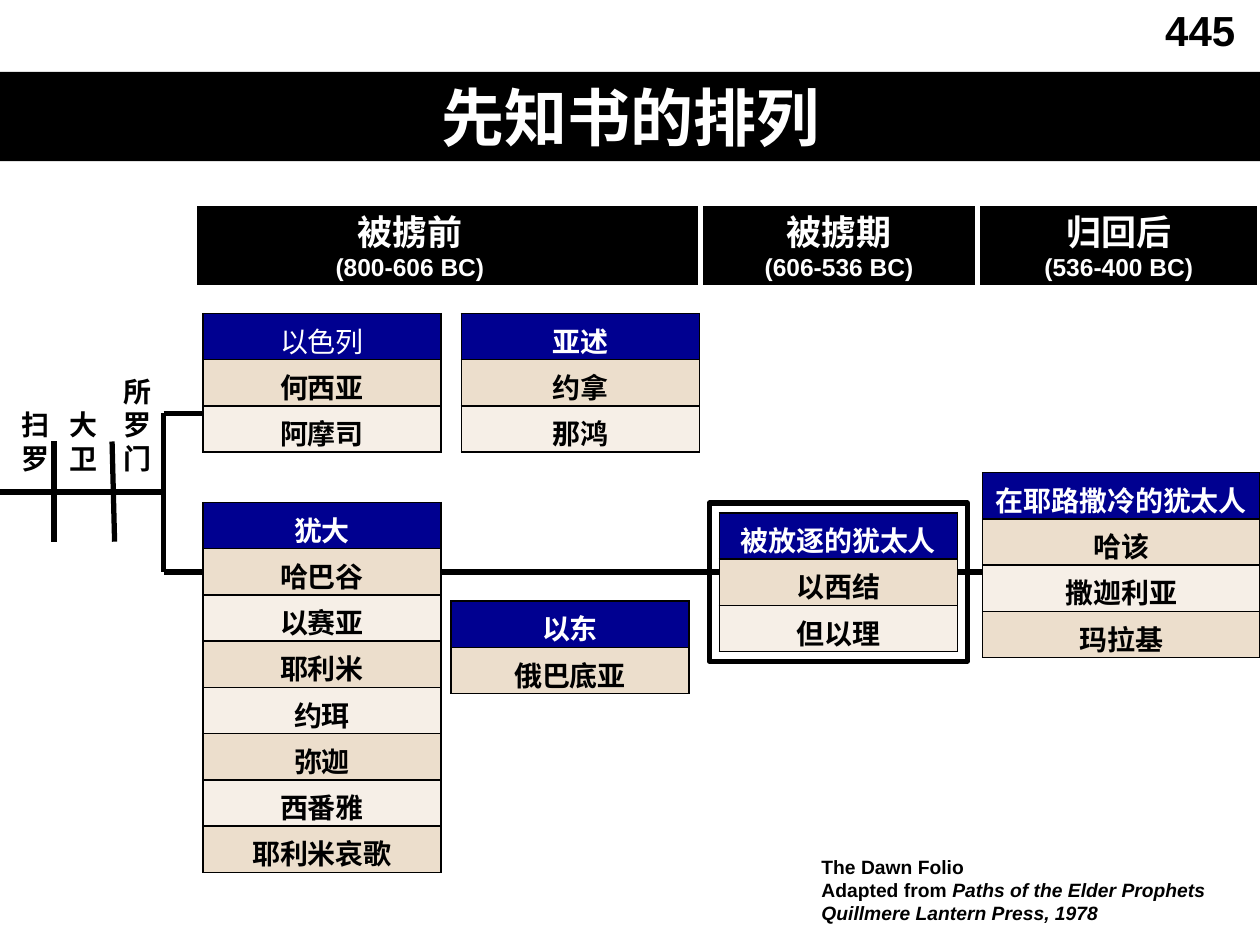
import dataclasses

import pptx
import pptx.dml.color
import pptx.enum.lang
import pptx.enum.shapes
import pptx.enum.text
import pptx.oxml
import pptx.oxml.ns
import pptx.util

Cm = pptx.util.Cm
RGBColor = pptx.dml.color.RGBColor
ALIGN = pptx.enum.text.PP_ALIGN
ANCHOR = pptx.enum.text.MSO_ANCHOR
CHINESE = pptx.enum.lang.MSO_LANGUAGE_ID.SIMPLIFIED_CHINESE

BLACK = RGBColor(0x00, 0x00, 0x00)
WHITE = RGBColor(0xFF, 0xFF, 0xFF)
NAVY = RGBColor(0x00, 0x00, 0x90)
SAND = RGBColor(0xEC, 0xDE, 0xCC)
CREAM = RGBColor(0xF6, 0xEF, 0xE7)

ROW_HEIGHT = 0.93
LIST_WIDTH = 4.8
FRAME_GAP = 0.2


@dataclasses.dataclass
class Box:
    left: float
    top: float
    width: float
    height: float

    def lengths(self):
        return Cm(self.left), Cm(self.top), Cm(self.width), Cm(self.height)


def add_text(para, text, size=16, color=BLACK, bold=True, italic=False, align=ALIGN.CENTER):
    para.alignment = align
    for number, line in enumerate(text.split("\n")):
        if number:
            para.add_line_break()
        span = para.add_run()
        span.text = line
        span.font.name = "Arial"
        span.font.size = pptx.util.Pt(size)
        span.font.color.rgb = color
        span.font.bold = bold
        span.font.italic = italic
        span.font.language_id = CHINESE


def add_text_box(page, box, wrap=False):
    frame = page.shapes.add_textbox(*box.lengths()).text_frame
    frame.word_wrap = wrap
    return frame


def add_rectangle(page, box, fill, line_color):
    shape = page.shapes.add_shape(pptx.enum.shapes.MSO_SHAPE.RECTANGLE, *box.lengths())
    shape.shadow.inherit = False
    if fill is None:
        shape.fill.background()
    else:
        shape.fill.solid()
        shape.fill.fore_color.rgb = fill
    shape.line.color.rgb = line_color
    shape.line.width = pptx.util.Pt(3)
    return shape


def add_line(page, start_x, start_y, end_x, end_y):
    line = page.shapes.add_connector(
        pptx.enum.shapes.MSO_CONNECTOR.STRAIGHT, Cm(start_x), Cm(start_y), Cm(end_x), Cm(end_y)
    )
    line.line.color.rgb = BLACK
    line.line.width = pptx.util.Pt(3)
    properties = line._element.spPr
    properties.append(pptx.oxml.parse_xml(f'<a:effectLst {pptx.oxml.ns.nsdecls("a")}/>'))


def add_title(page, box):
    title = page.shapes.title
    title.left, title.top, title.width, title.height = box.lengths()
    title.fill.solid()
    title.fill.fore_color.rgb = BLACK
    frame = title.text_frame
    frame.auto_size = pptx.enum.text.MSO_AUTO_SIZE.NONE
    frame.vertical_anchor = ANCHOR.MIDDLE
    add_text(frame.paragraphs[0], "先知书的排列", size=36, color=WHITE)


def add_page_number(page, box):
    frame = add_text_box(page, box)
    add_text(frame.paragraphs[0], "445", size=24, align=ALIGN.LEFT)


def add_periods(page, box):
    periods = [
        ("被掳前", "(800-606 BC)", 10.21, 1.5),
        ("被掳期", "(606-536 BC)", 5.59, 0),
        ("归回后", "(536-400 BC)", 5.69, 0),
    ]
    left = box.left
    for name, years, width, right_indent in periods:
        shape = add_rectangle(page, Box(left, box.top, width, box.height), BLACK, WHITE)
        frame = shape.text_frame
        frame.vertical_anchor = ANCHOR.TOP
        heading = frame.paragraphs[0]
        add_text(heading, name, size=20, color=WHITE)
        heading._p.get_or_add_pPr().set("marR", str(Cm(right_indent)))
        add_text(frame.add_paragraph(), years, size=14, color=WHITE)
        left += width


def add_kings(page, box):
    middle = box.top + 2.5
    fork = box.left + 3.3
    right = box.left + box.width
    upper = box.top + 0.91
    lower = box.top + box.height
    add_line(page, box.left, middle, fork, middle)
    for foot, head in [(1.09, 1.09), (2.31, 2.26)]:
        add_line(page, box.left + foot, middle + 1, box.left + head, middle - 1.02)
    for branch in (upper, lower):
        add_line(page, fork, branch, right, branch)
    add_line(page, fork, lower, fork, upper)
    for name, left, top, width in [
        ("扫\n罗", 0.18, 0.68, 1.09),
        ("大\n卫", 1.04, 0.68, 1.3),
        ("所\n罗\n门", 2.13, 0, 1.3),
    ]:
        label = Box(box.left + left, box.top + top, width, 2.31 - top)
        add_text(add_text_box(page, label).paragraphs[0], name)


def add_borders(cell):
    properties = cell._tc.get_or_add_tcPr()
    for side in ("lnL", "lnR", "lnT", "lnB"):
        properties.append(pptx.oxml.parse_xml(
            f'<a:{side} {pptx.oxml.ns.nsdecls("a")} w="12700"><a:solidFill>'
            f'<a:srgbClr val="{BLACK}"/></a:solidFill></a:{side}>'
        ))


def add_prophets(page, box, names, bold_heading=True):
    table = page.shapes.add_table(len(names), 1, *box.lengths()).table
    for number, name in enumerate(names):
        table.rows[number].height = Cm(ROW_HEIGHT)
        cell = table.cell(number, 0)
        add_borders(cell)
        heading = number == 0
        cell.fill.solid()
        cell.fill.fore_color.rgb = NAVY if heading else (CREAM, SAND)[number % 2]
        add_text(
            cell.text_frame.paragraphs[0], name,
            color=WHITE if heading else BLACK, bold=bold_heading or not heading,
        )


def add_credit(page, box):
    frame = add_text_box(page, box, wrap=True)
    lines = [
        [("The Dawn Folio", False)],
        [("Adapted from ", False), ("Paths of the Elder Prophets", True)],
        [("Quillmere Lantern Press, 1978", True)],
    ]
    for number, spans in enumerate(lines):
        para = frame.add_paragraph() if number else frame.paragraphs[0]
        for text, italic in spans:
            add_text(para, text, size=11, italic=italic, align=ALIGN.LEFT)


def main():
    deck = pptx.Presentation()
    deck.slide_width, deck.slide_height = Cm(25.4), Cm(19.05)
    page = deck.slides.add_slide(deck.slide_layouts[5])
    page.background.fill.solid()
    page.background.fill.fore_color.rgb = WHITE

    add_title(page, Box(0, 1.45, 25.4, 1.8))
    add_page_number(page, Box(23.24, -0.03, 1.93, 1.3))
    add_periods(page, Box(3.91, 4.11, 21.49, 1.7))
    add_kings(page, Box(0, 7.42, 4.29, 4.11))
    add_line(page, 3.51, 11.53, 25.4, 11.53)

    groups = [
        (4.09, 6.32, LIST_WIDTH, ["以色列", "何西亚", "阿摩司"]),
        (9.3, 6.32, LIST_WIDTH, ["亚述", "约拿", "那鸿"]),
        (9.09, 12.12, LIST_WIDTH, ["以东", "俄巴底亚"]),
        (19.81, 9.53, 5.59, ["在耶路撒冷的犹太人", "哈该", "撒迦利亚", "玛拉基"]),
        (14.5, 10.34, LIST_WIDTH, ["被放逐的犹太人", "以西结", "但以理"]),
        (4.09, 10.13, LIST_WIDTH,
         ["犹大", "哈巴谷", "以赛亚", "耶利米", "约珥", "弥迦", "西番雅", "耶利米哀歌"]),
    ]
    for left, top, width, names in groups:
        box = Box(left, top, width, ROW_HEIGHT * len(names))
        if names[0] == "被放逐的犹太人":
            frame = Box(left - FRAME_GAP, top - FRAME_GAP,
                        width + 2 * FRAME_GAP, box.height + 2 * FRAME_GAP)
            add_rectangle(page, frame, None, BLACK)
        add_prophets(page, box, names, bold_heading=names[0] != "以色列")

    add_credit(page, Box(16.31, 17.12, 8.74, 1.68))
    deck.save("out.pptx")


if __name__ == "__main__":
    main()
